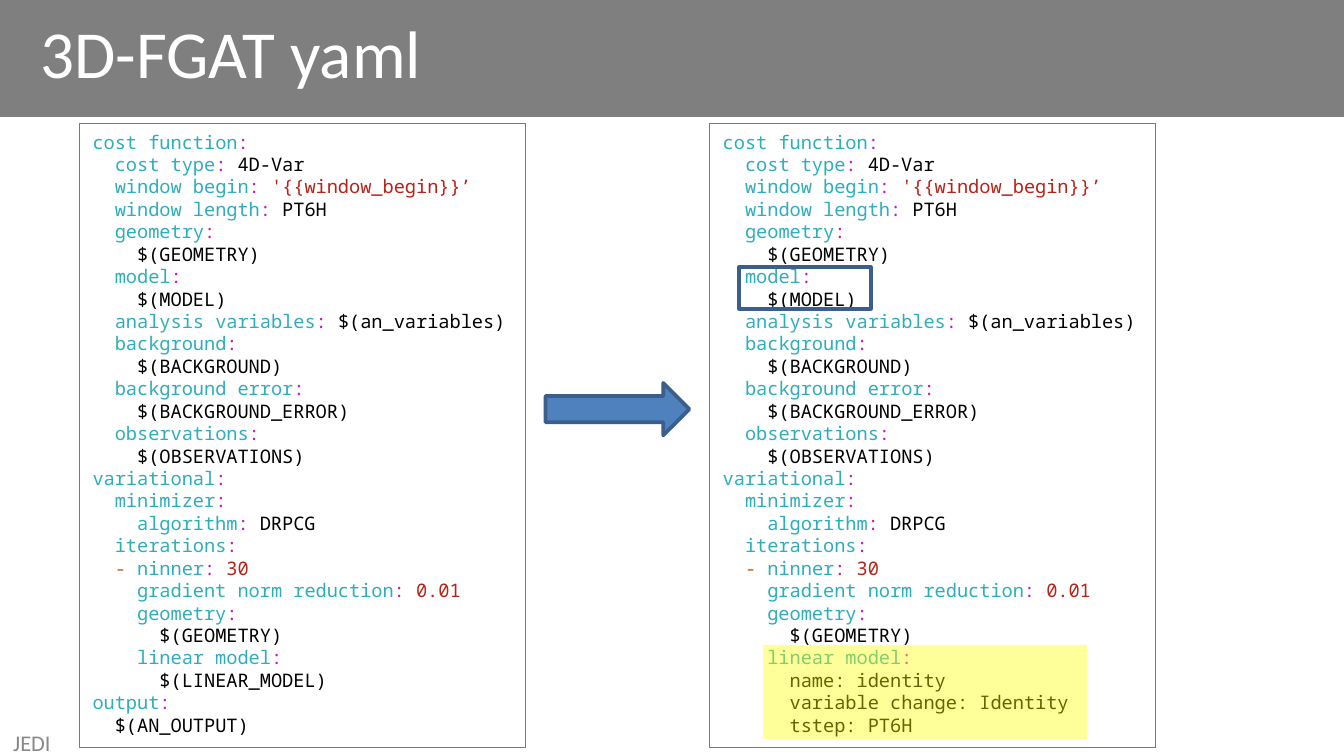
from dataclasses import dataclass

from lxml.etree import SubElement
from pptx import Presentation
from pptx.dml.color import RGBColor
from pptx.enum.shapes import MSO_SHAPE
from pptx.enum.text import MSO_ANCHOR, MSO_AUTO_SIZE, PP_ALIGN
from pptx.oxml.ns import qn
from pptx.util import Cm, Pt


@dataclass(frozen=True)
class Theme:
    sans: str = "Calibri"
    mono: str = "Noto Sans Mono"
    title_size: int = 36
    footer_size: int = 12
    code_size: int = 10
    bar: str = "000000"
    title: str = "FFFFFF"
    footer: str = "888888"
    accent: str = "4F81BD"
    outline: str = "3A5F8C"
    highlight: str = "FFFF00"
    key: str = "2EAEBB"
    colon: str = "C814C9"
    literal: str = "B42419"
    dash: str = "C1651C"
    plain: str = "000000"


theme = Theme()

COMMON = """cost function:
  cost type: 4D-Var
  window begin: '{{window_begin}}’
  window length: PT6H
  geometry:
    $(GEOMETRY)
  model:
    $(MODEL)
  analysis variables: $(an_variables)
  background:
    $(BACKGROUND)
  background error:
    $(BACKGROUND_ERROR)
  observations:
    $(OBSERVATIONS)
variational:
  minimizer:
    algorithm: DRPCG
  iterations:
  - ninner: 30
    gradient norm reduction: 0.01
    geometry:
      $(GEOMETRY)
    linear model:""".split("\n")
FOUR_D_VAR = ["      $(LINEAR_MODEL)", "output:", "  $(AN_OUTPUT)"]
FGAT = ["      name: identity", "      variable change: Identity", "      tstep: PT6H"]


def add_run(p, text, color, size=theme.code_size, font=theme.mono):
    r = p.add_run()
    r.text = text
    r.font.name = font
    r.font.size = Pt(size)
    r.font.color.rgb = RGBColor.from_string(color)


def add_box(shape, left, top, width, height, fill=None, alpha=100, line=None):
    sp = slide.shapes.add_shape(shape, Cm(left), Cm(top), Cm(width), Cm(height))
    sp.shadow.inherit = False
    if fill:
        sp.fill.solid()
        sp.fill.fore_color.rgb = RGBColor.from_string(fill)
        if alpha < 100:
            color = sp.fill._xPr.find(qn("a:solidFill"))[0]
            SubElement(color, qn("a:alpha"), val=str(alpha * 1000))
    else:
        sp.fill.background()
    if line:
        sp.line.color.rgb = RGBColor.from_string(line)
        sp.line.width = Pt(2)
    else:
        sp.line.fill.background()
    return sp


prs = Presentation()
prs.slide_width, prs.slide_height = Cm(25.4), Cm(14.29)
slide = prs.slides.add_slide(prs.slide_layouts[5])

title = slide.shapes.title
title.left, title.top, title.width, title.height = Cm(0.51), Cm(0), Cm(21.18), Cm(1.96)
title.text_frame.vertical_anchor = MSO_ANCHOR.MIDDLE
p = title.text_frame.paragraphs[0]
p.alignment = PP_ALIGN.LEFT
add_run(p, "3D-FGAT yaml", theme.title, theme.title_size, theme.sans)

bar = add_box(MSO_SHAPE.RECTANGLE, 0, 0, 25.4, 2.21, theme.bar, 50)
title._element.addprevious(bar._element)

footer = slide.shapes.add_textbox(Cm(0), Cm(13.77), Cm(5.92), Cm(0.53))
tf = footer.text_frame
tf.word_wrap = True
tf.vertical_anchor = MSO_ANCHOR.MIDDLE
add_run(tf.paragraphs[0], "JEDI", theme.footer, theme.footer_size, theme.sans)

for left, tail in ((13.41, FGAT), (1.5, FOUR_D_VAR)):
    sp = slide.shapes.add_textbox(Cm(left), Cm(2.34), Cm(8.43), Cm(11.79))
    sp.line.color.rgb = RGBColor.from_string(theme.accent)
    sp.line.width = Pt(0.75)
    tf = sp.text_frame
    tf.word_wrap = False
    tf.auto_size = MSO_AUTO_SIZE.SHAPE_TO_FIT_TEXT
    for i, line in enumerate(COMMON + tail):
        p = tf.add_paragraph() if i else tf.paragraphs[0]
        if ":" not in line or line in FGAT:
            add_run(p, line, theme.plain)
            continue
        body = line.lstrip()
        indent = line[:len(line) - len(body)]
        key, _, value = body.partition(":")
        value = value.strip()
        if indent:
            add_run(p, indent, theme.plain)
        if key.startswith("- "):
            add_run(p, "- ", theme.dash)
            key = key[2:]
        add_run(p, key, theme.key)
        add_run(p, ": " if value else ":", theme.colon)
        if value:
            is_literal = value[0] == "'" or value[0].isdigit() and value != "4D-Var"
            add_run(p, value, theme.literal if is_literal else theme.plain)

add_box(MSO_SHAPE.RIGHT_ARROW, 10.31, 7.24, 2.72, 0.99, theme.accent, line=theme.outline)
add_box(MSO_SHAPE.RECTANGLE, 14.43, 12.19, 6.12, 1.78, theme.highlight, 40)
add_box(MSO_SHAPE.RECTANGLE, 13.97, 5.05, 2.49, 0.79, line=theme.outline)

prs.save("out.pptx")
